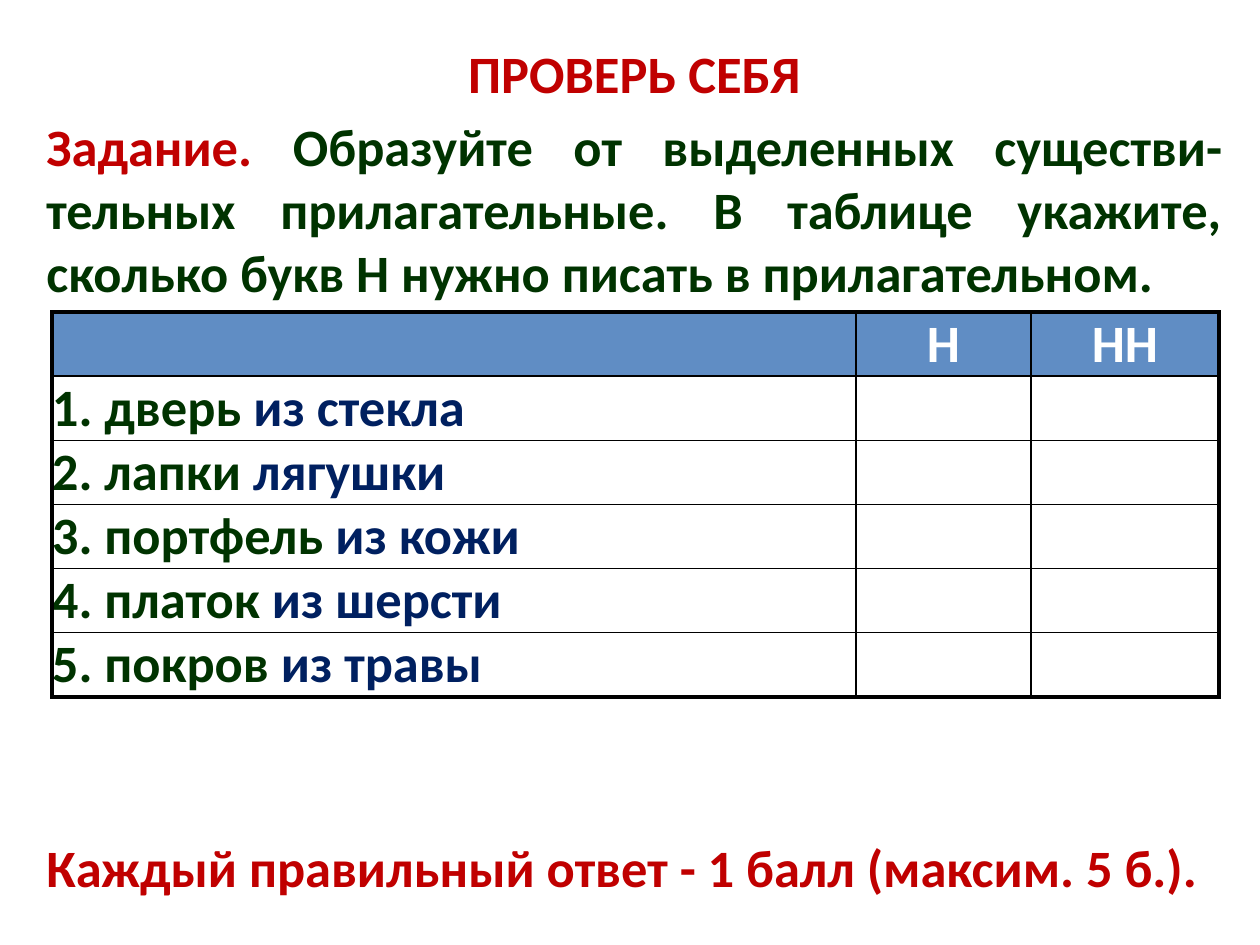
from lxml import etree
from pptx import Presentation
from pptx.dml.color import RGBColor
from pptx.enum.text import MSO_ANCHOR, MSO_AUTO_SIZE, PP_ALIGN
from pptx.oxml.ns import qn
from pptx.util import Emu, Pt

LEFT, CENTER, JUSTIFY = PP_ALIGN.LEFT, PP_ALIGN.CENTER, PP_ALIGN.JUSTIFY
TOP = MSO_ANCHOR.TOP
NO_FIT = MSO_AUTO_SIZE.NONE
TITLE_ONLY = 5
PX = 914400 / 126
FONT, SIZE = "Calibri", 30
COLORS = {
    "red": "C00000",
    "green": "003300",
    "navy": "002060",
    "white": "FFFFFF",
    "header": "608DC4",
    "border": "000000",
}
THIN, THICK = 1, 2.25
TEXT_LEFT, TEXT_WIDTH = 34, 1201
COLUMNS = [804, 175, 188]
ROW_HEIGHT = 63
HEADERS = ["", "Н", "НН"]
PHRASES = [
    ("1. дверь ", "из стекла"),
    ("2. лапки ", "лягушки"),
    ("3. портфель ", "из кожи"),
    ("4. платок ", "из шерсти"),
    ("5. покров ", "из травы"),
]


def px(n):
    return Emu(round(n * PX))


def rgb(name):
    return RGBColor.from_string(COLORS[name])


def write(tf, runs, align):
    """Fill the first paragraph with (text, colour name) runs."""
    p = tf.paragraphs[0]
    p.alignment = align
    p.font.name, p.font.size, p.font.bold = FONT, Pt(SIZE), True
    for text, color in runs:
        r = p.add_run()
        r.text = text
        r.font.color.rgb = rgb(color)


def place_text(s, top, height, runs, align):
    s.left, s.top = px(TEXT_LEFT), px(top)
    s.width, s.height = px(TEXT_WIDTH), px(height)
    tf = s.text_frame
    tf.word_wrap = True
    tf.auto_size = NO_FIT
    tf.vertical_anchor = TOP
    write(tf, runs, align)


def add_text(slide, top, height, runs, align):
    s = slide.shapes.add_textbox(0, 0, 0, 0)
    place_text(s, top, height, runs, align)


def set_borders(cell, widths):
    """Draw the left, right, top and bottom borders, widths in points."""
    tc_pr = cell._tc.get_or_add_tcPr()
    for i, (tag, width) in enumerate(zip(("lnL", "lnR", "lnT", "lnB"), widths)):
        ln = etree.Element(qn(f"a:{tag}"), w=str(Pt(width)))
        fill = etree.SubElement(ln, qn("a:solidFill"))
        etree.SubElement(fill, qn("a:srgbClr"), val=COLORS["border"])
        tc_pr.insert(i, ln)


def add_answer_table(slide, left, top):
    rows = [[[(text, "white")] if text else [] for text in HEADERS]]
    rows += [[[(noun, "green"), (source, "navy")], [], []] for noun, source in PHRASES]
    last_row, last_col = len(rows) - 1, len(COLUMNS) - 1
    table = slide.shapes.add_table(
        len(rows), len(COLUMNS), px(left), px(top),
        px(sum(COLUMNS)), px(ROW_HEIGHT * len(rows))).table
    table.horz_banding = False
    for column, width in zip(table.columns, COLUMNS):
        column.width = px(width)
    for i, row in enumerate(rows):
        table.rows[i].height = px(ROW_HEIGHT)
        for j, runs in enumerate(row):
            cell = table.cell(i, j)
            cell.margin_left = cell.margin_right = 0
            cell.margin_top = cell.margin_bottom = 0
            if i == 0:
                cell.fill.solid()
                cell.fill.fore_color.rgb = rgb("header")
            else:
                cell.fill.background()
            write(cell.text_frame, runs, CENTER if i == 0 else LEFT)
            outer = (j == 0, j == last_col, i == 0, i == last_row)
            set_borders(cell, [THICK if edge else THIN for edge in outer])


def main():
    prs = Presentation()
    prs.slide_width, prs.slide_height = px(1260), px(945)
    slide = prs.slides.add_slide(prs.slide_layouts[TITLE_ONLY])
    place_text(slide.shapes.title, 35, 77, [("ПРОВЕРЬ СЕБЯ", "red")], CENTER)
    task = [
        ("Задание. ", "red"),
        ("Образуйте от выделенных существи-тельных прилагательные. "
         "В таблице укажите, сколько букв Н нужно писать в прилагательном.", "green"),
    ]
    add_text(slide, 108, 204, task, JUSTIFY)
    add_answer_table(slide, 52, 312)
    score = [("Каждый правильный ответ - 1 балл (максим. 5 б.).", "red")]
    add_text(slide, 829, 77, score, LEFT)
    prs.save("out.pptx")


if __name__ == "__main__":
    main()
